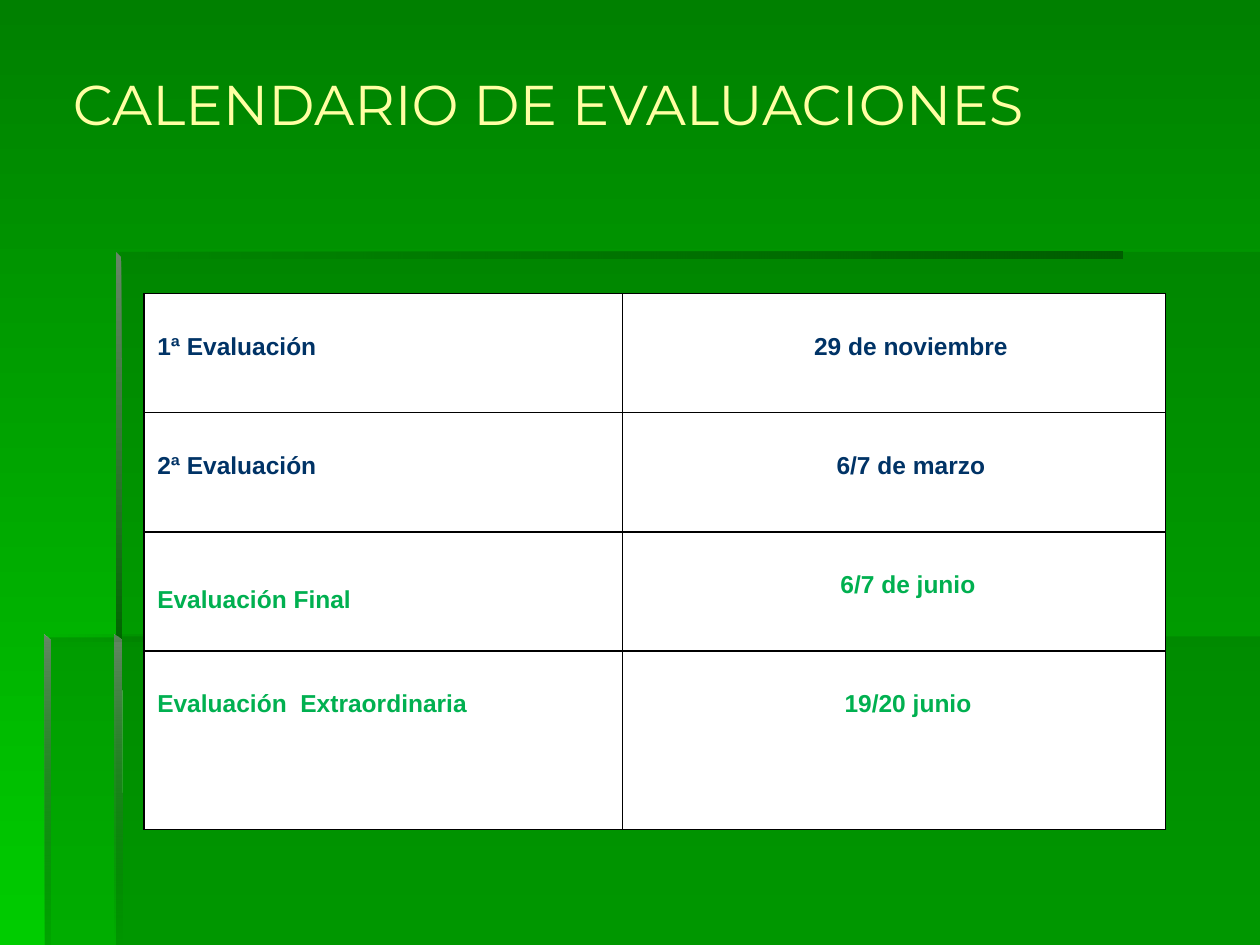
from lxml import etree
from pptx import Presentation
from pptx import util as u
from pptx.dml.color import RGBColor
from pptx.enum import text
from pptx.oxml.ns import qn

TITLE = "CALENDARIO DE EVALUACIONES"
NAVY, GREEN = "003366", "00B050"
ROWS = [
    ("1ª Evaluación", "29 de noviembre", NAVY, 2.4, 0.8, 0.68),
    ("2ª Evaluación", "6/7 de marzo", NAVY, 2.4, 0.8, 0.68),
    ("Evaluación Final", "6/7 de junio", GREEN, 2.4, 1.1, 0.56),
    ("Evaluación  Extraordinaria", "19/20 junio", GREEN, 3.6, 0.8, 0.56),
]
COLS = [9.65, 10.95]
PANE = [("006600", 30)]
FADE = [("006600", 0), ("005E00", 100)]
EDGE = [("668666", 100), ("006600", 100)]
MELT = [("668666", 100), ("006600", 0)]
DIM = [("668666", 100), ("006600", 10)]
ACROSS, DOWN = 0, 270
FORMS = [
    ([(2.34, 12.83), (2.34, 19.05), (25.4, 19.05), (25.4, 12.83)], PANE, DOWN),
    ([(2.39, 12.85), (0.91, 12.85), (0.91, 19.05), (25.4, 19.05),
      (25.4, 5.08), (2.39, 5.08)], PANE, DOWN),
    ([(2.34, 5.08), (2.34, 5.21), (22.63, 5.21), (22.63, 5.08)], FADE, ACROSS),
    ([(2.34, 5.08), (2.34, 12.95), (2.46, 12.95), (2.44, 5.18)], EDGE, DOWN),
    ([(2.31, 19.05), (2.46, 19.05), (2.44, 12.9), (2.31, 12.8)], MELT, DOWN),
    ([(0.89, 12.8), (0.89, 12.93), (13.59, 12.93), (13.59, 12.8)], FADE, ACROSS),
    ([(0.89, 12.8), (0.89, 19.05), (1.02, 19.05), (1.02, 12.93)], DIM, DOWN),
]


def tint(color, code):
    color.rgb = RGBColor.from_string(code)


def paint(fill, stops, angle=DOWN):
    if len(stops) == 1:
        fill.solid()
        colors = [fill.fore_color]
    else:
        fill.gradient()
        fill.gradient_angle = angle
        colors = [stop.color for stop in fill.gradient_stops]
    for color, (code, _) in zip(colors, stops):
        tint(color, code)
    return [alpha for _, alpha in stops]


def fade(shape, alphas):
    for node, alpha in zip(shape._element.spPr.iter(qn("a:srgbClr")), alphas):
        if alpha < 100:
            etree.SubElement(node, qn("a:alpha")).set("val", str(alpha * 1000))


def style(para, font, size, code, bold, align):
    para.alignment = align
    for run in para.runs:
        run.font.name, run.font.size, run.font.bold = font, u.Pt(size), bold
        tint(run.font.color, code)


def border(cell):
    props = cell._tc.get_or_add_tcPr()
    for side in ("lnL", "lnR", "lnT", "lnB"):
        line = etree.SubElement(props, qn("a:" + side), w=str(u.Pt(1)))
        solid = etree.SubElement(line, qn("a:solidFill"))
        etree.SubElement(solid, qn("a:srgbClr"), val="000000")


def fill_cell(cell, words, code, left, top, align):
    border(cell)
    paint(cell.fill, [("FFFFFF", 100)])
    cell.margin_left, cell.margin_top = u.Cm(left), u.Cm(top)
    cell.margin_right = cell.margin_bottom = 0
    cell.text_frame.text = words
    style(cell.text_frame.paragraphs[0], "Arial", 14, code, True, align)


def main():
    deck = Presentation()
    deck.slide_width, deck.slide_height = u.Cm(25.4), u.Cm(19.05)
    slide = deck.slides.add_slide(deck.slide_layouts[5])
    paint(slide.background.fill, [("008000", 100), ("00CC00", 100)])

    for points, stops, angle in FORMS:
        dots = [(round(x * 100), round(y * 100)) for x, y in points]
        pen = slide.shapes.build_freeform(*dots[0], scale=u.Cm(0.01))
        pen.add_line_segments(dots[1:], close=True)
        form = pen.convert_to_shape()
        form.shadow.inherit = False
        form.line.fill.background()
        fade(form, paint(form.fill, stops, angle))

    head = slide.shapes.title
    head.left, head.top = u.Cm(1.07), u.Cm(-0.46)
    head.width, head.height = u.Cm(24.33), u.Cm(3.35)
    frame = head.text_frame
    frame.text = TITLE
    frame.auto_size = text.MSO_AUTO_SIZE.NONE
    frame.vertical_anchor = text.MSO_ANCHOR.BOTTOM
    frame.margin_left = u.Cm(0.4)
    style(frame.paragraphs[0], "Montserrat", 32, "FFFFA3", False, text.PP_ALIGN.LEFT)

    high = sum(row[3] for row in ROWS)
    grid = slide.shapes.add_table(len(ROWS), len(COLS), u.Cm(2.9), u.Cm(5.92),
                                  u.Cm(sum(COLS)), u.Cm(high)).table
    grid.first_row = grid.horz_banding = False
    for col, width in zip(grid.columns, COLS):
        col.width = u.Cm(width)
    for i, (name, date, code, height, top, shift) in enumerate(ROWS):
        grid.rows[i].height = u.Cm(height)
        fill_cell(grid.cell(i, 0), name, code, 0.27, top, text.PP_ALIGN.LEFT)
        fill_cell(grid.cell(i, 1), date, code, shift, 0.8, text.PP_ALIGN.CENTER)

    deck.save("out.pptx")


if __name__ == "__main__":
    main()
